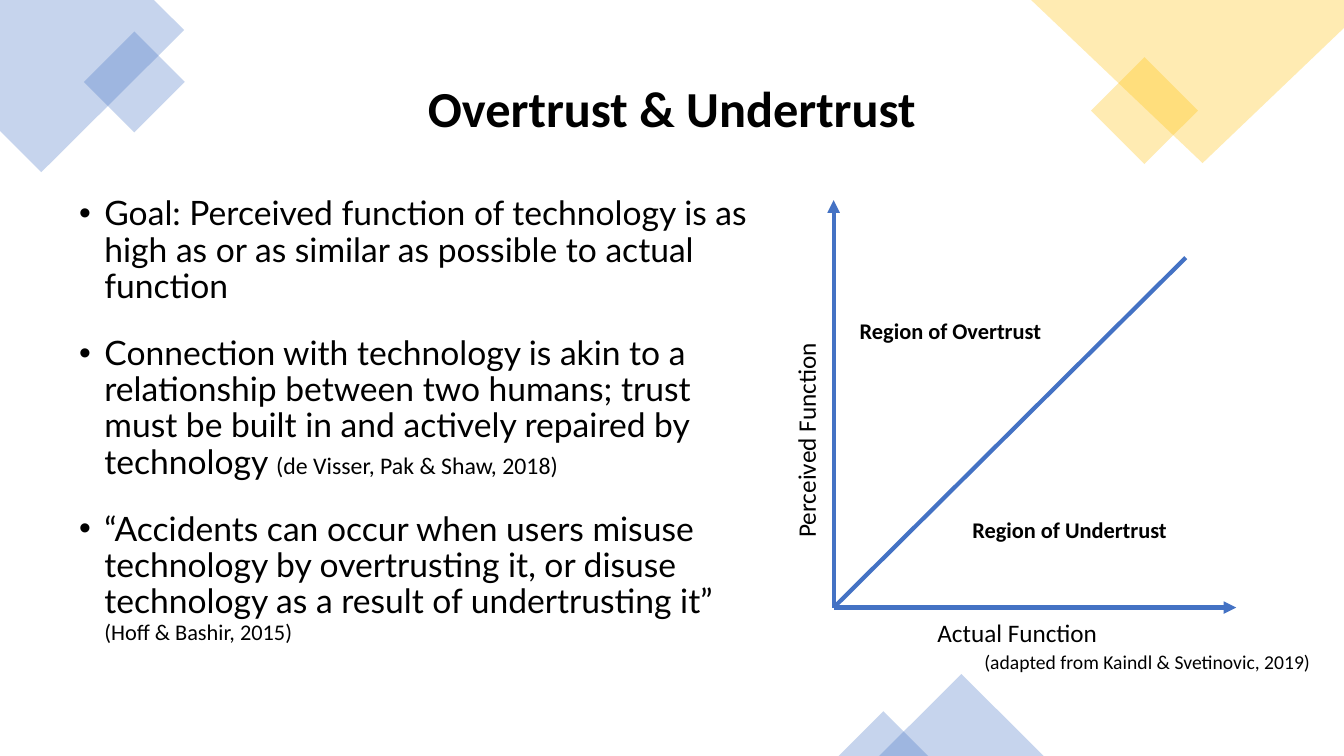
from lxml import etree
from pptx import Presentation, util as u
from pptx.dml import color
from pptx.enum import shapes, text
from pptx.oxml import ns

BLUE, GOLD, BLACK = "4472C4", "FFC000", "000000"
KINDS = shapes.MSO_SHAPE
CENTER = text.PP_ALIGN.CENTER


def rgb(code):
    """Turn a hex string into a colour."""
    return color.RGBColor.from_string(code)


def add(parent, tag, **attrs):
    """Append a drawing element with its attributes."""
    return etree.SubElement(parent, ns.qn("a:" + tag), **attrs)


def write(para, words, size=18, font="Calibri", bold=False, hue=BLACK):
    """Add formatted words to a paragraph."""
    run = para.add_run()
    run.text = words
    run.font.size = u.Pt(size)
    run.font.name = font
    run.font.bold = bold
    run.font.color.rgb = rgb(hue)


class Deck:
    """Hold the style and the current slide."""

    alpha = 30
    weight = 3

    def __init__(self, wide, high):
        """Open a deck with one blank slide."""
        self.file = Presentation()
        self.file.slide_width = u.Pt(wide)
        self.file.slide_height = u.Pt(high)
        self.slide = self.file.slides.add_slide(self.file.slide_layouts[6])

    def tint(self, shape, hue):
        """Give a shape a sheer fill and no line."""
        shape.shadow.inherit = False
        shape.line.fill.background()
        shape.fill.solid()
        shape.fill.fore_color.rgb = rgb(hue)
        tone = shape.element.spPr.find(".//" + ns.qn("a:srgbClr"))
        add(tone, "alpha", val=str(self.alpha * 1000))

    def shape(self, kind, box, hue, turn=0):
        """Draw a sheer preset shape."""
        shape = self.slide.shapes.add_shape(kind, *map(u.Pt, box))
        shape.rotation = turn
        self.tint(shape, hue)

    def outline(self, points, hue):
        """Draw a sheer polygon."""
        first, *rest = [tuple(map(u.Pt, point)) for point in points]
        pen = self.slide.shapes.build_freeform(*first)
        pen.add_line_segments(rest, close=True)
        self.tint(pen.convert_to_shape(), hue)

    def line(self, start, end, arrow=False):
        """Draw a straight line, with an arrowhead if asked."""
        line = self.slide.shapes.add_connector(
            shapes.MSO_CONNECTOR.STRAIGHT, *map(u.Pt, start + end))
        line.line.color.rgb = rgb(BLUE)
        line.line.width = u.Pt(self.weight)
        if arrow:
            add(line.line._get_or_add_ln(), "tailEnd", type="triangle")
        add(line.element.spPr, "effectLst")

    def frame(self, box, turn=0):
        """Add an empty wrapping text box."""
        area = self.slide.shapes.add_textbox(*map(u.Pt, box))
        area.rotation = turn
        area.text_frame.word_wrap = True
        return area.text_frame

    def label(self, words, box, turn=0, align=None, **style):
        """Add a text box with one paragraph."""
        frame = self.frame(box, turn)
        frame.vertical_anchor = text.MSO_ANCHOR.MIDDLE
        para = frame.paragraphs[0]
        para.alignment = align
        write(para, words, **style)

    def bullets(self, items, box, indent=18):
        """Add a bulleted list of claims, each with a source."""
        frame = self.frame(box)
        for place, (claim, source, size) in enumerate(items):
            para = frame.add_paragraph() if place else frame.paragraphs[0]
            para.line_spacing = 0.9
            para.space_before = u.Pt(10)
            para.space_after = u.Pt(12)
            props = para._p.get_or_add_pPr()
            props.set("marL", str(u.Pt(indent)))
            props.set("indent", str(u.Pt(-indent)))
            add(props, "buFont", typeface="Arial")
            add(props, "buChar", char="•")
            write(para, claim, size=24, font="Lato")
            if source:
                write(para, source, size=size)


def main():
    """Build the trust slide."""
    deck = Deck(960, 540)
    deck.label("Overtrust & Undertrust", (0, 53, 960, 48),
               align=CENTER, size=36, bold=True)

    deck.outline([(0, 0), (110, 0), (131.5, 21.5), (29.5, 123), (0, 93.5)], BLUE)
    deck.shape(KINDS.RECTANGLE, (70.5, 33, 51, 51), BLUE, 315)
    deck.shape(KINDS.RECTANGLE, (790.5, 52, 54, 54), GOLD, 315)
    deck.outline([(736.5, 0), (960, 0), (960, 20), (859, 116.5)], GOLD)

    deck.bullets([
        ("Goal: Perceived function of technology is as high as or as similar "
         "as possible to actual function", "", 0),
        ("Connection with technology is akin to a relationship between two "
         "humans; trust must be built in and actively repaired by technology ",
         "(de Visser, Pak & Shaw, 2018)", 17),
        ("“Accidents can occur when users misuse technology by overtrusting "
         "it, or disuse technology as a result of undertrusting it” ",
         "(Hoff & Bashir, 2015)", 16),
    ], (49.5, 137, 495, 349))

    deck.shape(KINDS.ISOSCELES_TRIANGLE, (628, 481.5, 117.5, 58.5), BLUE)
    deck.shape(KINDS.ISOSCELES_TRIANGLE, (599, 508, 64, 32), BLUE)

    zero = (595.5, 434)
    deck.line(zero, (883, 434), arrow=True)
    deck.line(zero, (595.5, 143), arrow=True)
    deck.line(zero, (847, 184))

    deck.label("Actual Function", (662.5, 435, 168, 33))
    deck.label("Perceived Function", (471, 270, 209, 33), turn=270)
    deck.label("Region of Overtrust", (607, 221, 168, 30), size=16, bold=True)
    deck.label("Region of Undertrust", (687.5, 363, 175, 30), size=16, bold=True)
    deck.label("(adapted from Kaindl & Svetinovic, 2019)",
               (696, 460, 251.5, 25), size=14)
    deck.file.save("out.pptx")


if __name__ == "__main__":
    main()
